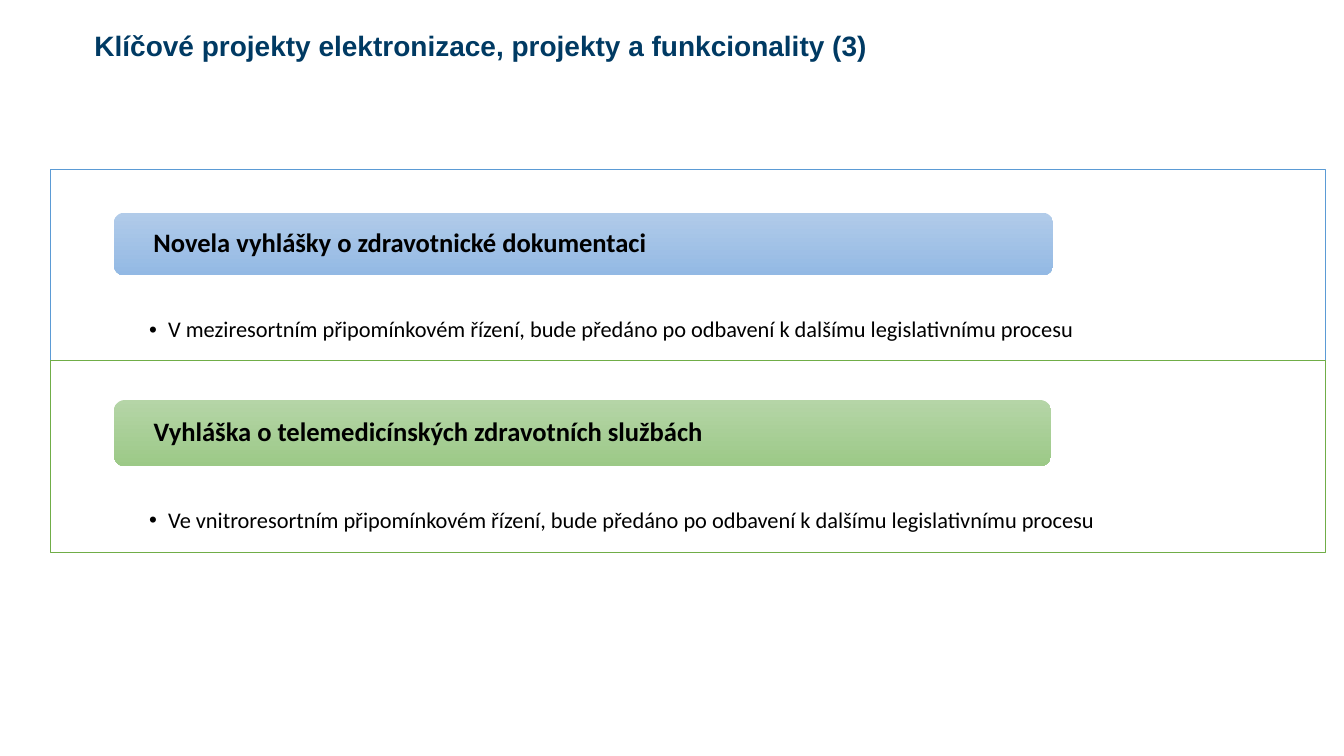
from lxml import etree
from pptx import Presentation
from pptx.dml.color import RGBColor
from pptx.enum.shapes import MSO_SHAPE
from pptx.enum.text import MSO_ANCHOR, PP_ALIGN
from pptx.oxml.ns import qn
from pptx.util import Cm, Pt

RECT, ROUNDED = MSO_SHAPE.RECTANGLE, MSO_SHAPE.ROUNDED_RECTANGLE
TOP, MIDDLE, LEFT = MSO_ANCHOR.TOP, MSO_ANCHOR.MIDDLE, PP_ALIGN.LEFT

# Content
TITLE = "Klíčové projekty elektronizace, projekty a funkcionality (3)"
DECREES = [
    {"heading": "Novela vyhlášky o zdravotnické dokumentaci",
     "status": "V meziresortním připomínkovém řízení, bude předáno po odbavení "
               "k dalšímu legislativnímu procesu",
     "colour": "blue", "bar": (5.36, 23.67, 1.58)},
    {"heading": "Vyhláška o telemedicínských zdravotních službách",
     "status": "Ve vnitroresortním připomínkovém řízení, bude předáno po odbavení "
               "k dalšímu legislativnímu procesu",
     "colour": "green", "bar": (10.08, 23.62, 1.67)},
]
COLOURS = {
    "title": "003A63", "text": "000000", "panel": "FFFFFF",
    "blue line": "5B9BD5", "blue top": "B1CBE9", "blue bottom": "93B9E4",
    "green line": "70AD47", "green top": "B5D5A7", "green bottom": "9CC987",
}

# Layout in centimetres
PANEL_LEFT, PANEL_TOP, PANEL_WIDTH, PANEL_HEIGHT, PANEL_STEP = 1.27, 4.27, 32.13, 4.83, 4.81
BAR_LEFT = 2.87
BULLET_INDENT = 0.48


def colour(name):
    return RGBColor.from_string(COLOURS[name])


def write(shape, text, font, size, ink, bold, insets, anchor, wrap=True):
    frame = shape.text_frame
    frame.word_wrap = wrap
    frame.vertical_anchor = anchor
    (frame.margin_left, frame.margin_top,
     frame.margin_right, frame.margin_bottom) = map(Cm, insets)
    paragraph = frame.paragraphs[0]
    paragraph.text = text
    paragraph.alignment = LEFT
    paragraph.font.name, paragraph.font.size, paragraph.font.bold = font, Pt(size), bold
    paragraph.font.color.rgb = colour(ink)
    return paragraph


def add_box(kind, left, top, width, height):
    box = slide.shapes.add_shape(kind, Cm(left), Cm(top), Cm(width), Cm(height))
    box.shadow.inherit = False
    return box


def add_bullet(paragraph):
    properties = paragraph._p.get_or_add_pPr()
    properties.set("marL", str(Cm(BULLET_INDENT)))
    properties.set("indent", str(-Cm(BULLET_INDENT)))
    etree.SubElement(properties, qn("a:buFont")).set("typeface", "Arial")
    etree.SubElement(properties, qn("a:buChar")).set("char", "•")


prs = Presentation()
prs.slide_width, prs.slide_height = Cm(33.87), Cm(19.05)
slide = prs.slides.add_slide(prs.slide_layouts[6])

# Framed panel with status, and heading bar on top
for index, decree in enumerate(DECREES):
    hue = decree["colour"]
    panel = add_box(RECT, PANEL_LEFT, PANEL_TOP + index * PANEL_STEP, PANEL_WIDTH, PANEL_HEIGHT)
    panel.fill.solid()
    panel.fill.fore_color.rgb = colour("panel")
    panel.line.color.rgb = colour(f"{hue} line")
    panel.line.width = Pt(0.5)
    status = write(panel, decree["status"], "Calibri", 16, "text", False,
                   (2.49, 3.76, 2.49, 0.3), TOP)
    status.line_spacing = 0.9
    add_bullet(status)

    bar_top, bar_width, bar_height = decree["bar"]
    bar = add_box(ROUNDED, BAR_LEFT, bar_top, bar_width, bar_height)
    bar.line.fill.background()
    bar.fill.gradient()
    bar.fill.gradient_angle = 270
    for stop, end in zip(bar.fill.gradient_stops, ("top", "bottom")):
        stop.color.rgb = colour(f"{hue} {end}")
    for stop, position in zip(bar.fill.gradient_stops, (0, 1)):
        stop.position = position
    heading = write(bar, decree["heading"], "Calibri", 19, "text", True,
                    (0.92, 0, 0.92, 0), MIDDLE)
    heading.line_spacing = 0.9

# Title
title = slide.shapes.add_textbox(Cm(2.13), Cm(0.58), Cm(20.12), Cm(1.12))
write(title, TITLE, "Arial", 20, "title", True, (0.25, 0.13, 0.25, 0.13), TOP, wrap=False)

prs.save("out.pptx")
